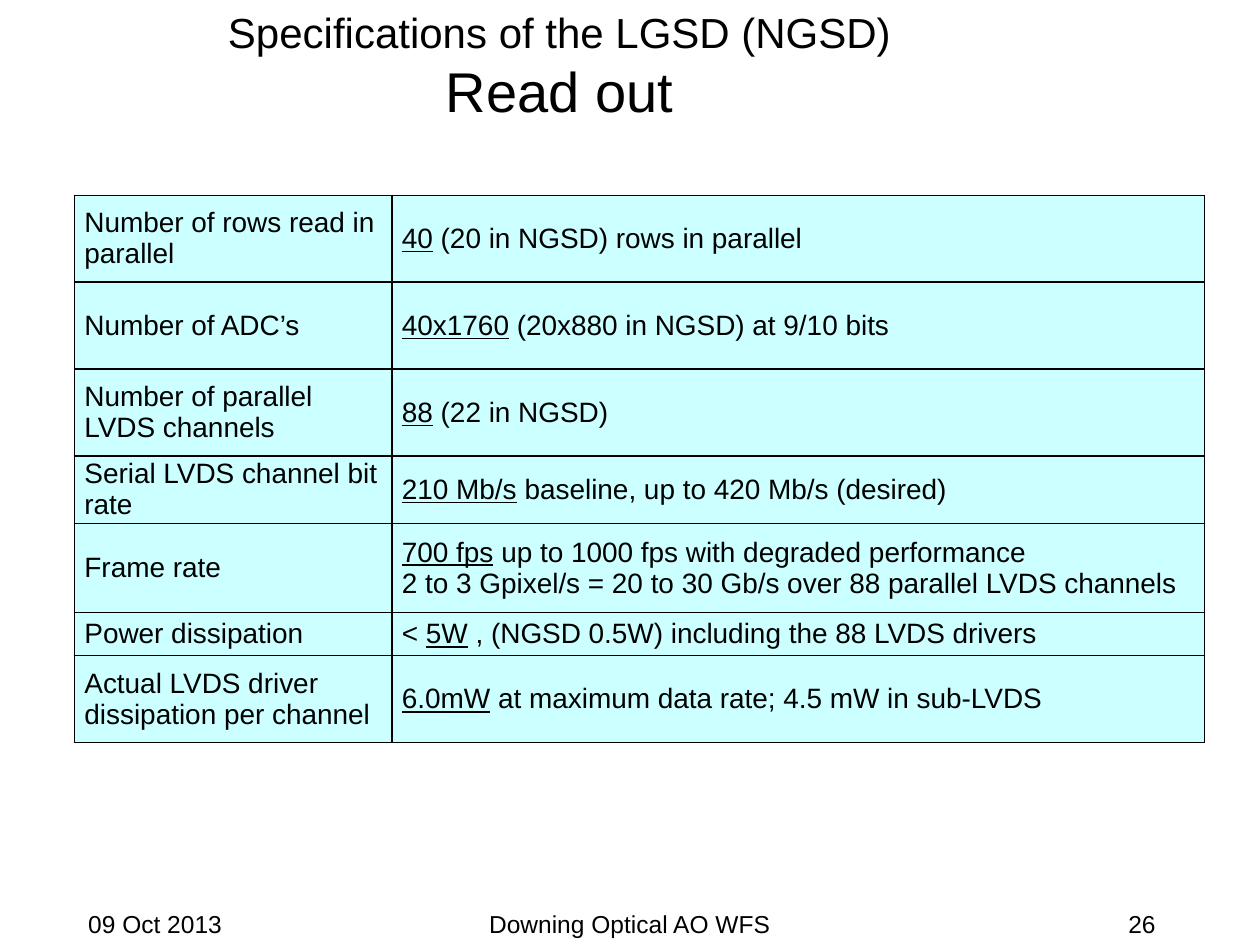
from typing import NamedTuple

import pptx
import pptx.dml.color
import pptx.enum.text
import pptx.oxml
import pptx.oxml.ns
import pptx.util
from pptx.util import Inches

COLORS = {"text": "000000", "cell": "CCFFFF", "border": "000000"}
FONT = "Arial"
ALIGN = pptx.enum.text.PP_ALIGN
ANCHOR = pptx.enum.text.MSO_ANCHOR


class Specification(NamedTuple):
    name: str
    height: float
    key_value: str
    remark: str
    prefix: str = ""
    second_line: str = ""


class Label(NamedTuple):
    text: str
    left: float
    width: float
    align: ALIGN
    left_inset: float = 0.1


SPECIFICATIONS = [
    Specification("Number of rows read in parallel", 0.69, "40", " (20 in NGSD) rows in parallel"),
    Specification("Number of ADC’s", 0.69, "40x1760", " (20x880 in NGSD) at 9/10 bits"),
    Specification("Number of parallel LVDS channels", 0.69, "88", " (22 in NGSD)"),
    Specification("Serial LVDS channel bit rate", 0.53, "210 Mb/s",
                  " baseline, up to 420 Mb/s (desired)"),
    Specification("Frame rate", 0.71, "700 fps", " up to 1000 fps with degraded performance",
                  second_line="2 to 3 Gpixel/s = 20 to 30 Gb/s over 88 parallel LVDS channels"),
    Specification("Power dissipation", 0.34, "5W",
                  " , (NGSD 0.5W) including the 88 LVDS drivers", prefix="< "),
    Specification("Actual LVDS driver dissipation per channel", 0.69, "6.0mW",
                  " at maximum data rate; 4.5 mW in sub-LVDS"),
]
COLUMN_WIDTHS = [2.52, 6.45]

FOOTER = [
    Label("09 Oct 2013", 0.7, 2.08, ALIGN.LEFT, left_inset=0),
    Label("Downing Optical AO WFS ", 3.44, 3.17, ALIGN.CENTER),
    Label("26", 7.19, 2.08, ALIGN.RIGHT),
]


def rgb(name: str) -> pptx.dml.color.RGBColor:
    return pptx.dml.color.RGBColor.from_string(COLORS[name])


def style_font(font, size: float) -> None:
    font.name = FONT
    font.size = pptx.util.Pt(size)
    font.color.rgb = rgb("text")


def add_title(slide) -> None:
    frame = slide.shapes.add_textbox(Inches(0.75), Inches(0.17),
                                     Inches(7.38), Inches(0.69)).text_frame
    frame.word_wrap = True
    frame.vertical_anchor = ANCHOR.MIDDLE
    heading = frame.paragraphs[0]
    heading.alignment = ALIGN.CENTER
    topic = heading.add_run()
    topic.text = "Specifications of the LGSD (NGSD)"
    style_font(topic.font, 24)
    heading.add_line_break()
    section = heading.add_run()
    section.text = "Read out"
    style_font(section.font, 32)


def add_footer_label(slide, label: Label) -> None:
    frame = slide.shapes.add_textbox(Inches(label.left), Inches(7),
                                     Inches(label.width), Inches(0.5)).text_frame
    frame.word_wrap = True
    frame.vertical_anchor = ANCHOR.BOTTOM
    frame.margin_left = Inches(label.left_inset)
    frame.text = label.text
    frame.paragraphs[0].alignment = label.align
    style_font(frame.paragraphs[0].font, 14)


def style_cell(cell) -> None:
    """Set margins, font, borders and fill; borders must precede the fill in the XML."""
    cell.vertical_anchor = ANCHOR.MIDDLE
    cell.margin_left = cell.margin_right = Inches(0.08)
    cell.margin_top = cell.margin_bottom = 0
    for paragraph in cell.text_frame.paragraphs:
        style_font(paragraph.font, 16)
    properties = cell._tc.get_or_add_tcPr()
    for side in ("lnL", "lnR", "lnT", "lnB"):
        properties.append(pptx.oxml.parse_xml(
            f'<a:{side} {pptx.oxml.ns.nsdecls("a")} w="{pptx.util.Pt(1)}"><a:solidFill>'
            f'<a:srgbClr val="{COLORS["border"]}"/></a:solidFill></a:{side}>'))
    cell.fill.solid()
    cell.fill.fore_color.rgb = rgb("cell")


def write_value(cell, specification: Specification) -> None:
    """Write the value with its key figure underlined."""
    value = cell.text_frame.paragraphs[0]
    if specification.prefix:
        value.add_run().text = specification.prefix
    key = value.add_run()
    key.text = specification.key_value
    key.font.underline = True
    value.add_run().text = specification.remark
    if specification.second_line:
        cell.text_frame.add_paragraph().text = specification.second_line


def add_specification_table(slide) -> None:
    table = slide.shapes.add_table(
        len(SPECIFICATIONS), len(COLUMN_WIDTHS), Inches(0.59), Inches(1.55),
        Inches(sum(COLUMN_WIDTHS)), Inches(sum(s.height for s in SPECIFICATIONS))).table
    table.first_row = table.horz_banding = False
    for column, width in zip(table.columns, COLUMN_WIDTHS):
        column.width = Inches(width)
    for row, specification in zip(table.rows, SPECIFICATIONS):
        row.height = Inches(specification.height)
        name_cell, value_cell = row.cells
        name_cell.text = specification.name
        write_value(value_cell, specification)
        style_cell(name_cell)
        style_cell(value_cell)


def main() -> None:
    presentation = pptx.Presentation()
    presentation.slide_width = Inches(10)
    presentation.slide_height = Inches(7.5)
    slide = presentation.slides.add_slide(presentation.slide_layouts[6])
    add_title(slide)
    add_specification_table(slide)
    for label in FOOTER:
        add_footer_label(slide, label)
    presentation.save("out.pptx")


if __name__ == "__main__":
    main()
